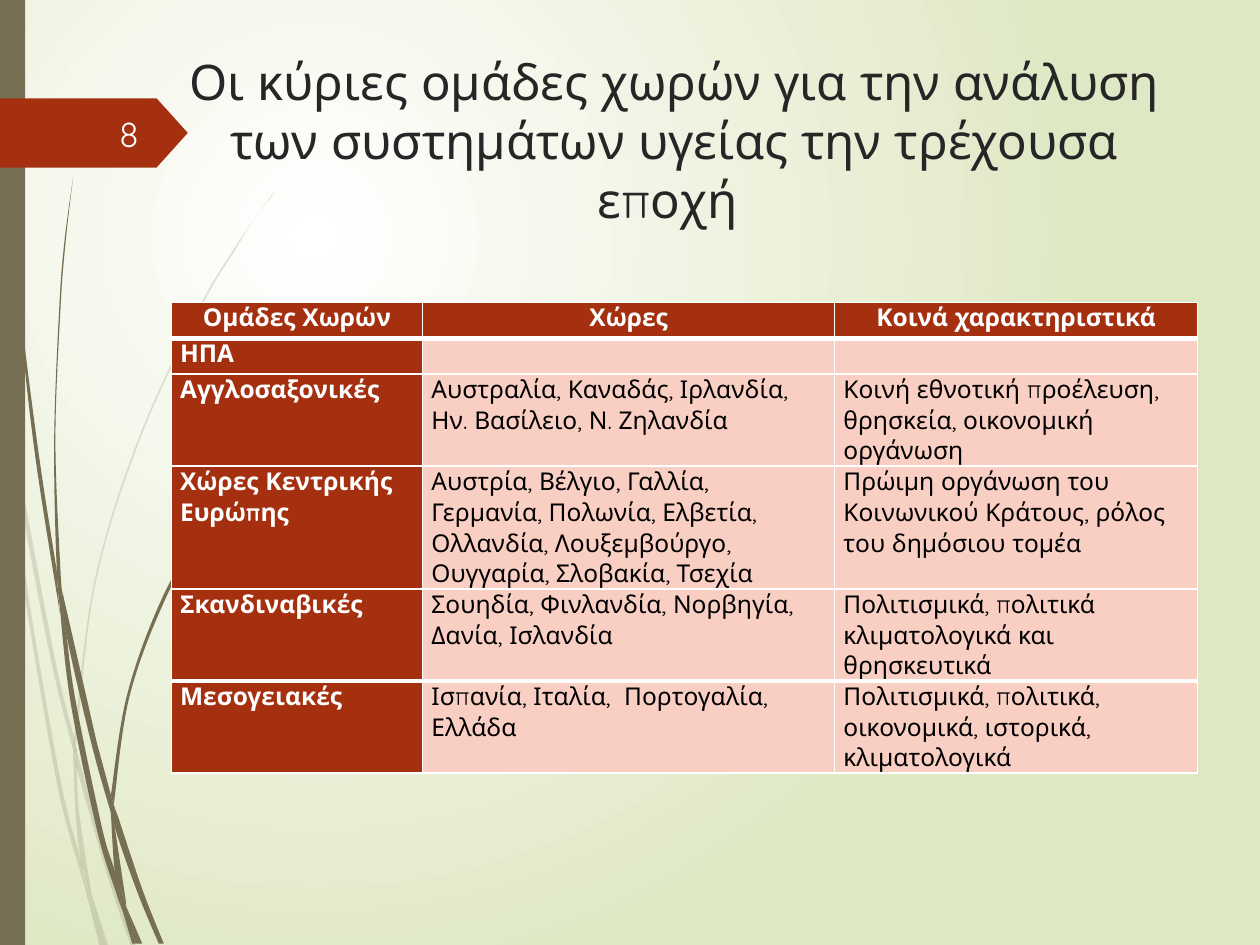
"""Build the slide on country groups used to analyse health systems."""
from dataclasses import dataclass

import pptx
import pptx.dml.color
import pptx.enum.shapes
import pptx.enum.text
import pptx.oxml
import pptx.oxml.ns
import pptx.util
from lxml import etree

COLUMNS, ROWS = 1000, 750
CELL = pptx.util.Inches(0.01)
FONT = "Quicksand"
COLOURS = {
    "stem": "766F54", "accent": "A53010", "pale": "F9CFC3", "white": "FFFFFF",
    "number": "FEFFFF", "title": "262626", "body": "000000", "meadow": "DFE8C4",
}
ALIGN = pptx.enum.text.PP_ALIGN
ANCHOR = pptx.enum.text.MSO_ANCHOR
SHAPE = pptx.enum.shapes.MSO_SHAPE


@dataclass
class Area:
    """A rectangle in grid columns and rows."""
    left: float
    top: float
    width: float
    height: float

    def lengths(self) -> list[int]:
        """Return the rectangle in slide units."""
        return [round(CELL * n) for n in (self.left, self.top, self.width, self.height)]


@dataclass
class Blade:
    """A piece of grass between two smooth edges of (column, row) points."""
    there: list[tuple[int, int]]
    back: list[tuple[int, int]]


@dataclass
class Style:
    """The look of a run of text."""
    size: int
    colour: str
    bold: bool = False


FAINT_BLADES = [
    Blade([(8, 350), (6, 322), (0, 282)], [(0, 299), (7, 344)]),
    Blade([(12, 376), (40, 522), (59, 599)], [(59, 586), (43, 520), (10, 345)]),
    Blade([(61, 610), (85, 694), (104, 751)], [(108, 751), (88, 692), (64, 607), (61, 596)]),
    Blade([(73, 711), (83, 751)], [(86, 751)]),
    Blade([(70, 714), (64, 683), (48, 619), (22, 469), (12, 376), (8, 350)],
          [(19, 470), (45, 621), (64, 693)]),
    Blade([(58, 599), (60, 646), (64, 683), (67, 692), (73, 711)],
          [(72, 706), (63, 646), (61, 610), (61, 608)]),
    Blade([(217, 153), (201, 175), (186, 197), (158, 244), (110, 348), (75, 461),
           (59, 584), (59, 586)],
          [(61, 596), (61, 584), (76, 462), (111, 349), (159, 245), (187, 198),
           (201, 175), (217, 154)]),
    Blade([(70, 714), (79, 751)], [(82, 751)]),
    Blade([(58, 599), (59, 586)], [(61, 596), (61, 610)]),
    Blade([(65, 683), (69, 707), (70, 714), (82, 751)], [(83, 751), (73, 711), (67, 692)]),
]
BLADES = [
    Blade([(2, 0), (3, 48), (5, 110), (14, 233), (27, 355), (46, 477), (47, 481)],
          [(45, 457), (45, 453), (30, 355), (15, 232), (6, 109), (4, 48), (3, 0)]),
    Blade([(50, 472), (53, 505), (73, 592), (88, 645)], [(88, 633), (88, 631), (77, 590)]),
    Blade([(91, 641), (91, 656), (109, 708), (126, 749)], [(130, 749), (113, 706), (94, 649)]),
    Blade([(47, 477), (56, 557), (77, 659), (92, 708), (97, 722)],
          [(96, 717), (91, 691), (81, 657), (60, 556), (53, 505)]),
    Blade([(58, 141), (51, 193), (47, 245), (43, 349), (45, 449), (49, 472)],
          [(50, 472), (48, 453), (44, 349), (48, 245), (52, 193), (58, 141)]),
    Blade([(100, 719), (110, 749)], [(113, 749)]),
    Blade([(45, 449), (45, 453), (47, 477), (53, 505)], [(50, 472), (49, 472)]),
    Blade([(215, 344), (203, 358), (191, 373), (168, 405), (129, 474), (101, 551), (88, 631)],
          [(91, 641), (91, 633), (103, 552), (131, 476), (169, 406), (191, 374),
           (203, 359), (216, 344)]),
    Blade([(97, 722), (105, 749)], [(108, 749)]),
    Blade([(88, 645), (91, 691), (96, 706), (100, 719)], [(100, 716), (91, 656), (90, 651)]),
    Blade([(88, 631), (88, 645), (90, 651), (91, 656)], [(91, 641)]),
    Blade([(91, 691), (96, 717), (97, 722), (108, 749)], [(110, 749), (100, 719), (96, 706)]),
]

TABLE_COLUMNS = [199.5, 327, 288]
TABLE_ROWS = [28.5, 28.5, 57, 81, 45, 69]
TABLE_TEXT = [
    ("Ομάδες Χωρών", "Χώρες", "Κοινά χαρακτηριστικά"),
    ("ΗΠΑ", "", ""),
    ("Αγγλοσαξονικές", "Αυστραλία, Καναδάς, Ιρλανδία, Ην. Βασίλειο, Ν. Ζηλανδία",
     "Κοινή εθνοτική προέλευση, θρησκεία, οικονομική οργάνωση"),
    ("Χώρες Κεντρικής Ευρώπης",
     "Αυστρία, Βέλγιο, Γαλλία, Γερμανία, Πολωνία, Ελβετία, Ολλανδία, "
     "Λουξεμβούργο, Ουγγαρία, Σλοβακία, Τσεχία",
     "Πρώιμη οργάνωση του Κοινωνικού Κράτους, ρόλος του δημόσιου τομέα"),
    ("Σκανδιναβικές", "Σουηδία, Φινλανδία, Νορβηγία, Δανία, Ισλανδία",
     "Πολιτισμικά, πολιτικά κλιματολογικά και θρησκευτικά"),
    ("Μεσογειακές", "Ισπανία, Ιταλία,  Πορτογαλία, Ελλάδα",
     "Πολιτισμικά, πολιτικά, οικονομικά, ιστορικά, κλιματολογικά"),
]


def rgb(name: str) -> pptx.dml.color.RGBColor:
    """Return a named colour."""
    return pptx.dml.color.RGBColor.from_string(COLOURS[name])


def add_node(parent, tag: str, **attributes):
    """Append a drawing element to a parent."""
    return etree.SubElement(parent, pptx.oxml.ns.qn(tag), attributes)


def write(frame, text: str, style: Style, align=ALIGN.LEFT) -> None:
    """Write one run into the first paragraph of a frame."""
    frame.word_wrap = True
    para = frame.paragraphs[0]
    para.alignment = align
    span = para.add_run()
    span.text = text
    span.font.name = FONT
    span.font.size = pptx.util.Pt(style.size)
    span.font.bold = style.bold
    span.font.color.rgb = rgb(style.colour)


def paint(shape, colour: str) -> None:
    """Give a shape a flat fill without line or shadow."""
    shape.shadow.inherit = False
    shape.fill.solid()
    shape.fill.fore_color.rgb = rgb(colour)
    shape.line.fill.background()


def paint_background(page) -> None:
    """Fill the page with a circular gradient."""
    fill = page.background.fill
    fill.gradient()
    for stop, name in zip(fill.gradient_stops, ("white", "meadow")):
        stop.color.rgb = rgb(name)
    linear = page.element.find(".//" + pptx.oxml.ns.qn("a:lin"))
    gradient = linear.getparent()
    gradient.remove(linear)
    circle = add_node(gradient, "a:path", path="circle")
    add_node(circle, "a:fillToRect", l="50000", t="50000", r="100000", b="100000")


def bend(nodes: list) -> None:
    """Turn the straight steps along an edge into smooth curves."""
    points = [(int(node[0].get("x")), int(node[0].get("y"))) for node in nodes]
    ends = [points[0], *points, points[-1]]
    for node, a, b, c, d in zip(nodes[1:], ends, ends[1:], ends[2:], ends[3:]):
        curve = etree.Element(pptx.oxml.ns.qn("a:cubicBezTo"))
        first = [round(q + (r - p) / 6) for p, q, r in zip(a, b, c)]
        second = [round(q - (r - p) / 6) for p, q, r in zip(b, c, d)]
        for x, y in (first, second, c):
            add_node(curve, "a:pt", x=str(x), y=str(y))
        node.getparent().replace(node, curve)


def draw_blade(page, blade: Blade, opacity: int) -> None:
    """Draw a piece of grass as a closed outline with curved edges."""
    points = [(x * CELL, y * CELL) for x, y in blade.there + blade.back]
    builder = page.shapes.build_freeform(*points[0])
    builder.add_line_segments(points[1:], close=True)
    shape = builder.convert_to_shape()
    paint(shape, "stem")
    nodes = list(shape.element.spPr.find(".//" + pptx.oxml.ns.qn("a:path")))[:len(points)]
    turn = len(blade.there)
    bend(nodes[:turn])
    bend(nodes[turn:])
    if opacity < 100:
        colour = shape.element.spPr.find(".//" + pptx.oxml.ns.qn("a:srgbClr"))
        add_node(colour, "a:alpha", val=str(opacity * 1000))


def draw_preset(page, kind, area: Area, colour: str):
    """Draw a flat preset shape."""
    shape = page.shapes.add_shape(kind, *area.lengths())
    paint(shape, colour)
    return shape


def format_cell(cell, text: str, row: int, column: int) -> None:
    """Set borders, fill and wording of a table cell."""
    last = len(TABLE_ROWS) - 1
    weights = {"L": 1, "R": 1, "T": 3 if row in (1, last) else 1,
               "B": 3 if row in (0, last - 1) else 1}
    properties = cell._tc.get_or_add_tcPr()
    for side, weight in weights.items():
        line = add_node(properties, f"a:ln{side}", w=str(pptx.util.Pt(weight)))
        add_node(add_node(line, "a:solidFill"), "a:srgbClr", val=COLOURS["white"])
    heading = row == 0 or column == 0
    cell.fill.solid()
    cell.fill.fore_color.rgb = rgb("accent" if heading else "pale")
    cell.margin_left = cell.margin_right = 7 * CELL
    cell.margin_top = cell.margin_bottom = 0
    if text:
        style = Style(14, "white" if heading else "body", heading)
        write(cell.text_frame, text, style, ALIGN.LEFT if row else ALIGN.CENTER)
    else:
        add_node(cell.text_frame.paragraphs[0]._p, "a:endParaRPr", sz="1400")


def draw_table(page, area: Area) -> None:
    """Draw the table of country groups."""
    frame = page.shapes.add_table(len(TABLE_ROWS), len(TABLE_COLUMNS), *area.lengths())
    table = frame.table
    table.horz_banding = False
    for column, width in zip(table.columns, TABLE_COLUMNS):
        column.width = round(width * CELL)
    for i, (height, texts) in enumerate(zip(TABLE_ROWS, TABLE_TEXT)):
        table.rows[i].height = round(height * CELL)
        for j, text in enumerate(texts):
            format_cell(table.cell(i, j), text, i, j)
    frame.height = area.lengths()[3]


def main() -> None:
    """Build and save the deck."""
    deck = pptx.Presentation()
    deck.slide_width, deck.slide_height = COLUMNS * CELL, ROWS * CELL
    page = deck.slides.add_slide(deck.slide_layouts[5])
    paint_background(page)
    for blades, opacity in ((FAINT_BLADES, 20), (BLADES, 100)):
        for blade in blades:
            draw_blade(page, blade, opacity)
    draw_preset(page, SHAPE.RECTANGLE, Area(0, 0, 20, ROWS), "stem")
    tag = draw_preset(page, SHAPE.PENTAGON, Area(0, 78, 149, 55), "accent")
    tag.adjustments[0] = 0.45
    title = page.shapes.title
    title.left, title.top, title.width, title.height = Area(137, 36, 796, 173).lengths()
    title.text_frame.vertical_anchor = ANCHOR.TOP
    write(title.text_frame,
          "Οι κύριες ομάδες χωρών για την ανάλυση των συστημάτων υγείας την τρέχουσα εποχή ",
          Style(28, "title"), ALIGN.CENTER)
    draw_table(page, Area(136, 240, sum(TABLE_COLUMNS), 361))
    number = page.shapes.add_textbox(*Area(56, 86, 64, 40).lengths())
    number.text_frame.vertical_anchor = ANCHOR.MIDDLE
    write(number.text_frame, "8", Style(20, "number"), ALIGN.RIGHT)
    deck.save("out.pptx")


if __name__ == "__main__":
    main()
